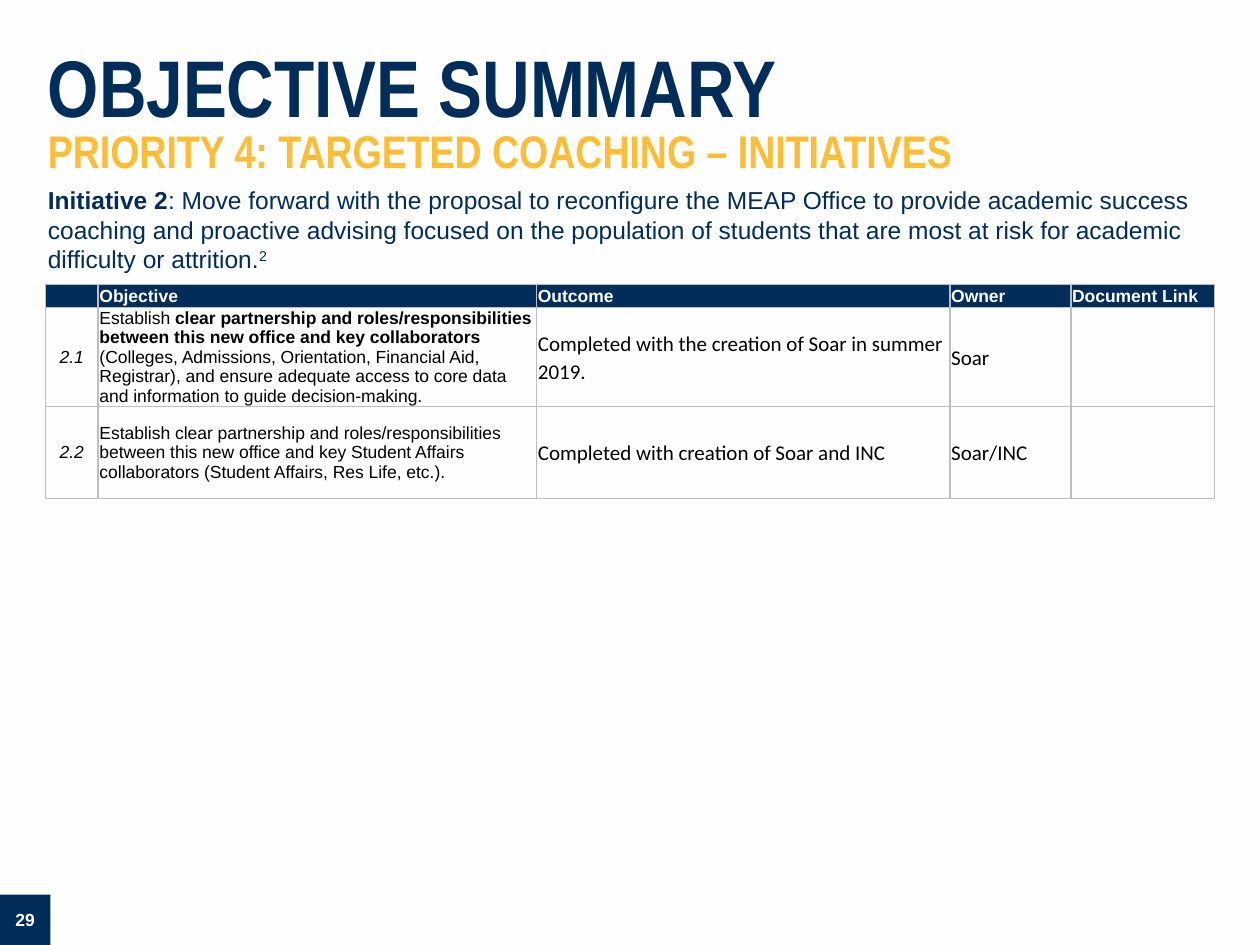
import pptx
import pptx.dml.color
import pptx.enum.shapes
import pptx.enum.text
import pptx.oxml
import pptx.oxml.ns
import pptx.util
from lxml import etree

Pt = pptx.util.Pt
RGBColor = pptx.dml.color.RGBColor
ALIGN = pptx.enum.text.PP_ALIGN
MIDDLE = pptx.enum.text.MSO_ANCHOR.MIDDLE
qn = pptx.oxml.ns.qn

NAVY = RGBColor(0x01, 0x2D, 0x5B)
GOLD = RGBColor(0xFE, 0xBD, 0x36)
WHITE = RGBColor(0xFE, 0xFE, 0xFE)
BLACK = RGBColor(0, 0, 0)
GREY = RGBColor(0xBE, 0xBE, 0xBE)


def set_values(target, values):
    for name, value in values.items():
        setattr(target, name, value)


def add_span(para, text, color, **values):
    span = para.add_run()
    span.text = text
    set_values(span.font, values)
    span.font.color.rgb = color
    return span


deck = pptx.Presentation()
set_values(deck, {"slide_width": Pt(720), "slide_height": Pt(540)})
page = deck.slides.add_slide(deck.slide_layouts[1])
page.background.fill.solid()
page.background.fill.fore_color.rgb = WHITE

# Page number
number_box = page.shapes.add_shape(
    pptx.enum.shapes.MSO_SHAPE.RECTANGLE, 0, Pt(511.2), Pt(28.8), Pt(28.8))
number_box.shadow.inherit = False
number_box.fill.solid()
number_box.fill.fore_color.rgb = NAVY
number_box.line.fill.background()
set_values(number_box.text_frame, {
    "margin_left": 0, "margin_right": 0, "vertical_anchor": MIDDLE})
para = number_box.text_frame.paragraphs[0]
para.alignment = ALIGN.CENTER
add_span(para, "29", WHITE, size=Pt(10), name="Arial", bold=True)

# Title
title = page.shapes.title
set_values(title, {"left": Pt(20.16), "top": Pt(22.32),
                   "width": Pt(699.84), "height": Pt(88.56)})
set_values(title.text_frame, {
    "margin_left": Pt(7.2), "margin_top": Pt(7.2),
    "margin_right": Pt(7.2), "margin_bottom": Pt(7.2),
    "vertical_anchor": MIDDLE, "word_wrap": True,
    "auto_size": pptx.enum.text.MSO_AUTO_SIZE.NONE})
para = title.text_frame.paragraphs[0]
set_values(para, {"alignment": ALIGN.LEFT, "line_spacing": 0.8})
title_font = {"name": "Arial Narrow", "bold": True}
add_span(para, "OBJECTIVE SUMMARY", NAVY, size=Pt(45.9), **title_font)
para.add_line_break()
add_span(para, "PRIORITY 4: TARGETED COACHING – INITIATIVES", GOLD,
         size=Pt(26.1), **title_font)

# Initiative statement
body = page.placeholders[1]
set_values(body, {"left": Pt(20.16), "top": Pt(102.24),
                  "width": Pt(680.4), "height": Pt(64.8)})
set_values(body.text_frame, {
    "word_wrap": True, "auto_size": pptx.enum.text.MSO_AUTO_SIZE.NONE})
para = body.text_frame.paragraphs[0]
properties = para._p.get_or_add_pPr()
properties.set("marL", "0")
properties.set("indent", "0")
etree.SubElement(properties, qn("a:buNone"))
para.space_before = Pt(0)
body_font = {"name": "Arial", "size": Pt(14)}
add_span(para, "Initiative 2", NAVY, bold=True, **body_font)
add_span(para, ": Move forward with the proposal to reconfigure the MEAP Office "
         "to provide academic success coaching and proactive advising focused on "
         "the population of students that are most at risk for academic "
         "difficulty or attrition.", NAVY, bold=False, **body_font)
footnote = add_span(para, "2", NAVY, bold=False, **body_font)
footnote.font._element.set("baseline", "30000")

# Objectives table: each cell is a list of (text, bold) spans
column_widths = [30.24, 250.56, 236.16, 69.12, 82.08]
row_heights = [12.24, 42.48, 52.56]
rows = [
    [[]] + [[(heading, True)] for heading in
            ("Objective", "Outcome", "Owner", "Document Link")],
    [[("2.1", False)],
     [("Establish ", False),
      ("clear partnership and roles/responsibilities between this new office "
       "and key collaborators ", True),
      ("(Colleges, Admissions, Orientation, Financial Aid, Registrar), and ensure "
       "adequate access to core data and information to guide decision-making.",
       False)],
     [("Completed with the creation of Soar in summer 2019.", False)],
     [("Soar", False)],
     []],
    [[("2.2", False)],
     [("Establish clear partnership and roles/responsibilities between this new "
       "office and key Student Affairs collaborators (Student Affairs, Res Life, "
       "etc.).", False)],
     [("Completed with creation of Soar and INC", False)],
     [("Soar/INC", False)],
     []],
]
row_fills = [NAVY, None, WHITE]

table = page.shapes.add_table(
    len(rows), len(column_widths), Pt(25.92), Pt(162.72),
    Pt(sum(column_widths)), Pt(sum(row_heights))).table
set_values(table, {"first_row": False, "horz_banding": False})
for column, width in zip(table.columns, column_widths):
    column.width = Pt(width)
for row, height in zip(table.rows, row_heights):
    row.height = Pt(height)

for r, row in enumerate(rows):
    for c, spans in enumerate(row):
        cell = table.cell(r, c)
        set_values(cell, {
            "margin_left": Pt(0.72), "margin_top": Pt(0.72),
            "margin_right": Pt(0.72), "margin_bottom": 0,
            "vertical_anchor": MIDDLE})

        # Borders come before the fill in the cell properties
        for side in ("a:lnL", "a:lnR", "a:lnT", "a:lnB"):
            border = etree.SubElement(
                cell._tc.get_or_add_tcPr(), qn(side), w=str(Pt(1)))
            fill = etree.SubElement(border, qn("a:solidFill"))
            etree.SubElement(fill, qn("a:srgbClr"), val=str(GREY))
        if row_fills[r] is None:
            cell.fill.background()
        else:
            cell.fill.solid()
            cell.fill.fore_color.rgb = row_fills[r]

        para = cell.text_frame.paragraphs[0]
        font = {"name": "Arial", "size": Pt(10), "italic": r > 0 and c == 0}
        if r > 0 and c == 0:
            para.alignment = ALIGN.CENTER
        if r > 0 and c in (2, 3):
            para.line_spacing = 1.07
            font.update(name="Calibri", size=Pt(12))
        for text, bold in spans:
            add_span(para, text, BLACK if r else WHITE, bold=bold, **font)
        if not spans:
            # Small end mark keeps an empty cell from stretching its row
            etree.SubElement(para._p, qn("a:endParaRPr"), sz="1000")

deck.save("out.pptx")
